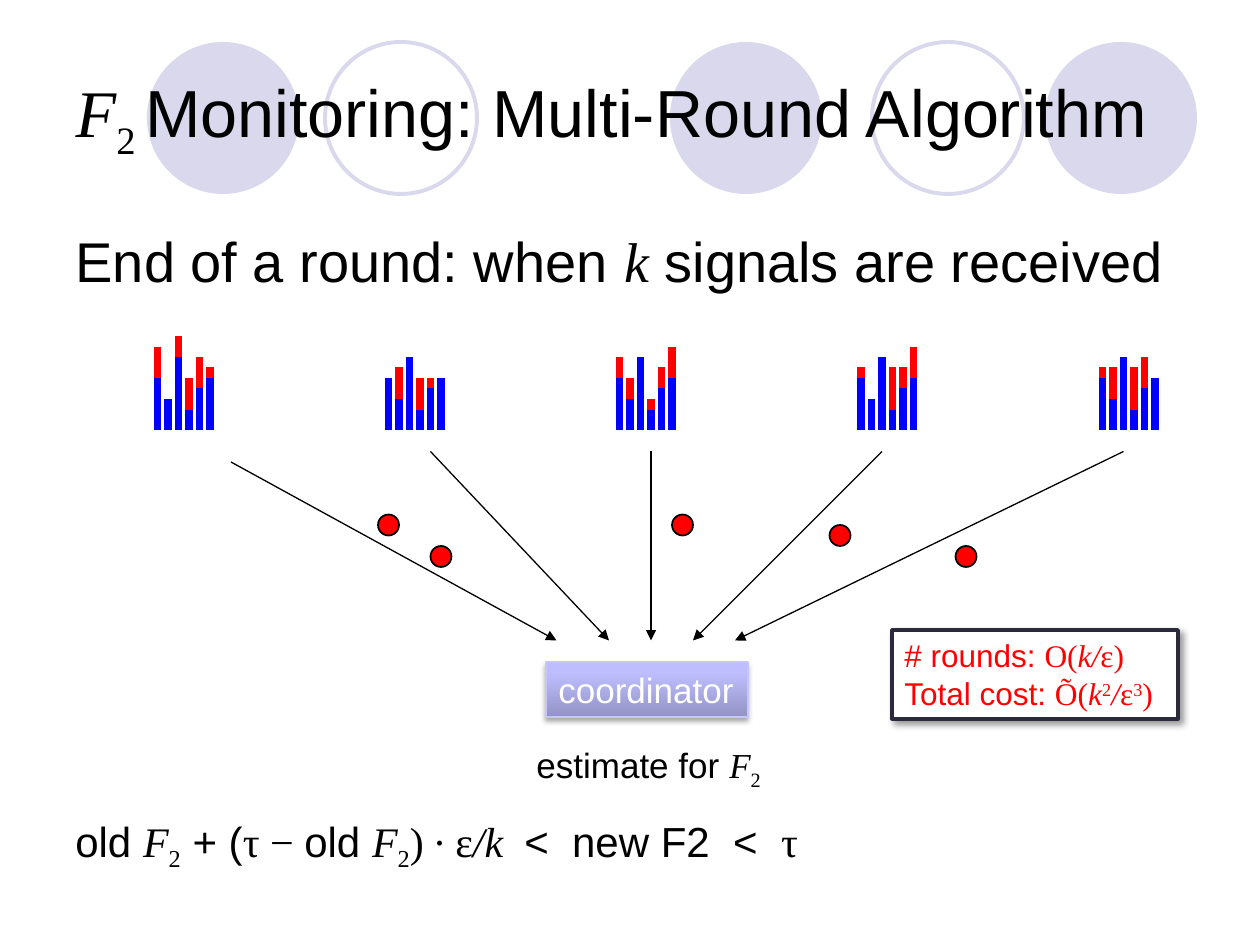
from dataclasses import dataclass
from pptx import Presentation
from pptx.dml.color import RGBColor
from pptx.enum.shapes import MSO_CONNECTOR, MSO_SHAPE
from pptx.enum.text import MSO_ANCHOR, MSO_AUTO_SIZE, PP_ALIGN
from pptx.oxml import parse_xml
from pptx.oxml.ns import nsdecls, qn
from pptx.util import Pt


@dataclass(frozen=True)
class Theme:
    sans: str = "Arial"
    serif: str = "Times New Roman"
    black: str = "000000"
    white: str = "FFFFFF"
    red: str = "FF0000"
    blue: str = "0000FF"
    lilac: str = "D9D8EC"
    button_edge: str = "C6C6FB"
    frame: str = "2A2A3C"
    button: tuple = ((0, "9393C4"), (80, "BEBEFE"), (100, "C0C0FF"))
    title: int = 38
    body: int = 32
    formula: int = 24
    label: int = 20
    note: int = 18


THEME = Theme()
PX = 914400 / 126  # EMU per px
CELL = 10.5        # px per cell of the diagram grid

# Text: paragraphs of (text, style); styles are listed in STYLES
STYLES = {  # font, italic, baseline
    "sans": (THEME.sans, False, 0),
    "serif": (THEME.serif, False, 0),
    "var": (THEME.serif, True, 0),
    "sub": (THEME.serif, False, -25000),
    "sup": (THEME.serif, False, 30000),
}
F2 = [("F", "var"), ("2", "sub")]
TITLE = [[("F", "var"), ("2 ", "sub"), ("Monitoring: Multi-Round Algorithm", "sans")]]
BODY = [[("End of a round: when ", "sans"), ("k", "var"), (" signals are received", "sans")]]
ESTIMATE = [[("estimate for ", "sans"), *F2]]
COORDINATOR = [[("coordinator", "sans")]]
BOUNDS = [[("old ", "sans"), *F2, (" + (", "sans"), ("τ − ", "serif"), ("old ", "sans"), *F2,
           (") ∙ ε", "serif"), ("/k  ", "var"), ("<  new F2  <  ", "sans"), ("τ", "serif")]]
COST = [
    [("# rounds: ", "sans"), ("O(", "serif"), ("k/", "var"), ("ε)", "serif")],
    [("Total cost: ", "sans"), ("Õ(", "serif"), ("k", "var"), ("2", "sup"), ("/", "var"),
     ("ε", "serif"), ("3", "sup"), (")", "serif")],
]

# Background circles in px: left, filled
CIRCLES = [(147, True), (325, False), (670, True), (872, False), (1045, True)]
CIRCLE_TOP, CIRCLE_SIZE = 42, 152

# Diagram in grid cells
BASELINE = 41
OLD_COUNTS = [5, 3, 7, 2, 4, 5]
SITES = [  # first column, new counts on top of the old ones
    (15, [3, 0, 2, 3, 3, 1]),
    (37, [0, 3, 0, 3, 1, 0]),
    (59, [2, 2, 0, 1, 2, 3]),
    (82, [1, 0, 0, 4, 2, 3]),
    (105, [1, 3, 0, 4, 3, 0]),
]
ARROWS = [((22, 44), (53, 61)), ((41, 43), (58, 61)), ((62, 43), (62, 61)),
          ((84, 43), (66, 61)), ((107, 43), (70, 61))]
SIGNALS = [(36, 49), (79, 50), (91, 52), (41, 52), (64, 49)]
SIGNAL_SIZE = 2


def emu(*lengths):
    return [round(length * PX) for length in lengths]


def cells(*counts):
    return emu(*(count * CELL for count in counts))


def rgb(color):
    return RGBColor.from_string(color)


def write(frame, paragraphs, size, color):
    frame.text = "\n" * (len(paragraphs) - 1)
    for para, parts in zip(frame.paragraphs, paragraphs):
        para.alignment = PP_ALIGN.LEFT
        for text, style in parts:
            span = para.add_run()
            span.text = text
            font, italic, baseline = STYLES[style]
            span.font.name, span.font.italic = font, italic
            span.font.size, span.font.color.rgb = Pt(size), rgb(color)
            if baseline:
                span._r.get_or_add_rPr().set("baseline", str(baseline))


def fill_placeholder(holder, box, paragraphs, size):
    holder.left, holder.top, holder.width, holder.height = emu(*box)
    write(holder.text_frame, paragraphs, size, THEME.black)
    holder.text_frame.auto_size = MSO_AUTO_SIZE.NONE


def add_text(page, box, paragraphs, size, color):
    label = page.shapes.add_textbox(*emu(*box))
    write(label.text_frame, paragraphs, size, color)
    label.text_frame.word_wrap = False
    label.text_frame.auto_size = MSO_AUTO_SIZE.SHAPE_TO_FIT_TEXT
    return label


def outline(shape, color, width):
    shape.line.color.rgb, shape.line.width = rgb(color), Pt(width)


def add_shadow(shape, opacity, blur, distance, angle):
    shape.shadow.inherit = False
    shape.element.spPr.find(qn("a:effectLst")).append(parse_xml(
        f'<a:outerShdw {nsdecls("a")} blurRad="{Pt(blur)}" dist="{Pt(distance)}" '
        f'dir="{angle * 60000}" algn="tl" rotWithShape="0"><a:srgbClr val="{THEME.black}">'
        f'<a:alpha val="{opacity * 1000}"/></a:srgbClr></a:outerShdw>'))


def add_gradient(shape, stops, angle):
    shape.fill.background()
    flat = shape.element.spPr.find(qn("a:noFill"))
    colors = "".join(f'<a:gs pos="{position * 1000}"><a:srgbClr val="{color}"/></a:gs>'
                     for position, color in stops)
    flat.getparent().replace(flat, parse_xml(
        f'<a:gradFill {nsdecls("a")} rotWithShape="1"><a:gsLst>{colors}</a:gsLst>'
        f'<a:lin ang="{angle * 60000}" scaled="0"/></a:gradFill>'))


def add_ellipse(page, box, fill=None, edge=None, width=1):
    ellipse = page.shapes.add_shape(MSO_SHAPE.OVAL, *box)
    ellipse.shadow.inherit = False
    if fill:
        ellipse.fill.solid()
        ellipse.fill.fore_color.rgb = rgb(fill)
    else:
        ellipse.fill.background()
    if edge:
        outline(ellipse, edge, width)
    else:
        ellipse.line.fill.background()
    return ellipse


def add_line(page, start, end, color, width, arrow=False):
    line = page.shapes.add_connector(MSO_CONNECTOR.STRAIGHT, *cells(*start, *end))
    outline(line, color, width)
    if arrow:
        line.get_or_add_ln().append(parse_xml(f'<a:tailEnd {nsdecls("a")} type="triangle"/>'))
    line.element.spPr.append(parse_xml(f'<a:effectLst {nsdecls("a")}/>'))


def main():
    deck = Presentation()
    deck.slide_width, deck.slide_height = emu(1260, 945)
    page = deck.slides.add_slide(deck.slide_layouts[1])
    title, body = page.placeholders

    # Title over the row of circles
    fill_placeholder(title, (63, 38, 1134, 157), TITLE, THEME.title)
    title.text_frame.vertical_anchor = MSO_ANCHOR.MIDDLE
    for left, filled in CIRCLES:
        box = emu(left, CIRCLE_TOP, CIRCLE_SIZE, CIRCLE_SIZE)
        look = {"fill": THEME.lilac} if filled else {"edge": THEME.lilac, "width": 2.25}
        title.element.addprevious(add_ellipse(page, box, **look).element)

    # Body line without a bullet
    fill_placeholder(body, (63, 220, 1134, 84), BODY, THEME.body)
    settings = body.text_frame.paragraphs[0]._p.get_or_add_pPr()
    settings.append(parse_xml(f'<a:buNone {nsdecls("a")}/>'))

    # Counts at each site: old in blue, new in red
    for first, new_counts in SITES:
        for column, (old, new) in enumerate(zip(OLD_COUNTS, new_counts), first):
            middle = BASELINE - old
            add_line(page, (column, middle), (column, BASELINE), THEME.blue, 4.5)
            if new:
                add_line(page, (column, middle - new), (column, middle), THEME.red, 4.5)

    # Signals on their way to the coordinator
    for start, end in ARROWS:
        add_line(page, start, end, THEME.black, 0.75, arrow=True)
    for left, top in SIGNALS:
        add_ellipse(page, cells(left, top, SIGNAL_SIZE, SIGNAL_SIZE), THEME.red, THEME.black)

    # Coordinator and its estimate
    add_text(page, (524, 737, 253, 55), ESTIMATE, THEME.label, THEME.black)
    coordinator = add_text(page, (546, 662, 202, 55), COORDINATOR, THEME.label, THEME.white)
    add_gradient(coordinator, THEME.button, 270)
    outline(coordinator, THEME.button_edge, 0.75)
    add_shadow(coordinator, 35, 3.1, 1.8, 90)

    # Bounds and cost
    add_text(page, (63, 809, 767, 64), BOUNDS, THEME.formula, THEME.black)
    cost = add_text(page, (892, 630, 286, 89), COST, THEME.note, THEME.red)
    cost.fill.solid()
    cost.fill.fore_color.rgb = rgb(THEME.white)
    outline(cost, THEME.frame, 2)
    add_shadow(cost, 40, 4, 3, 45)

    deck.save("out.pptx")


if __name__ == "__main__":
    main()
